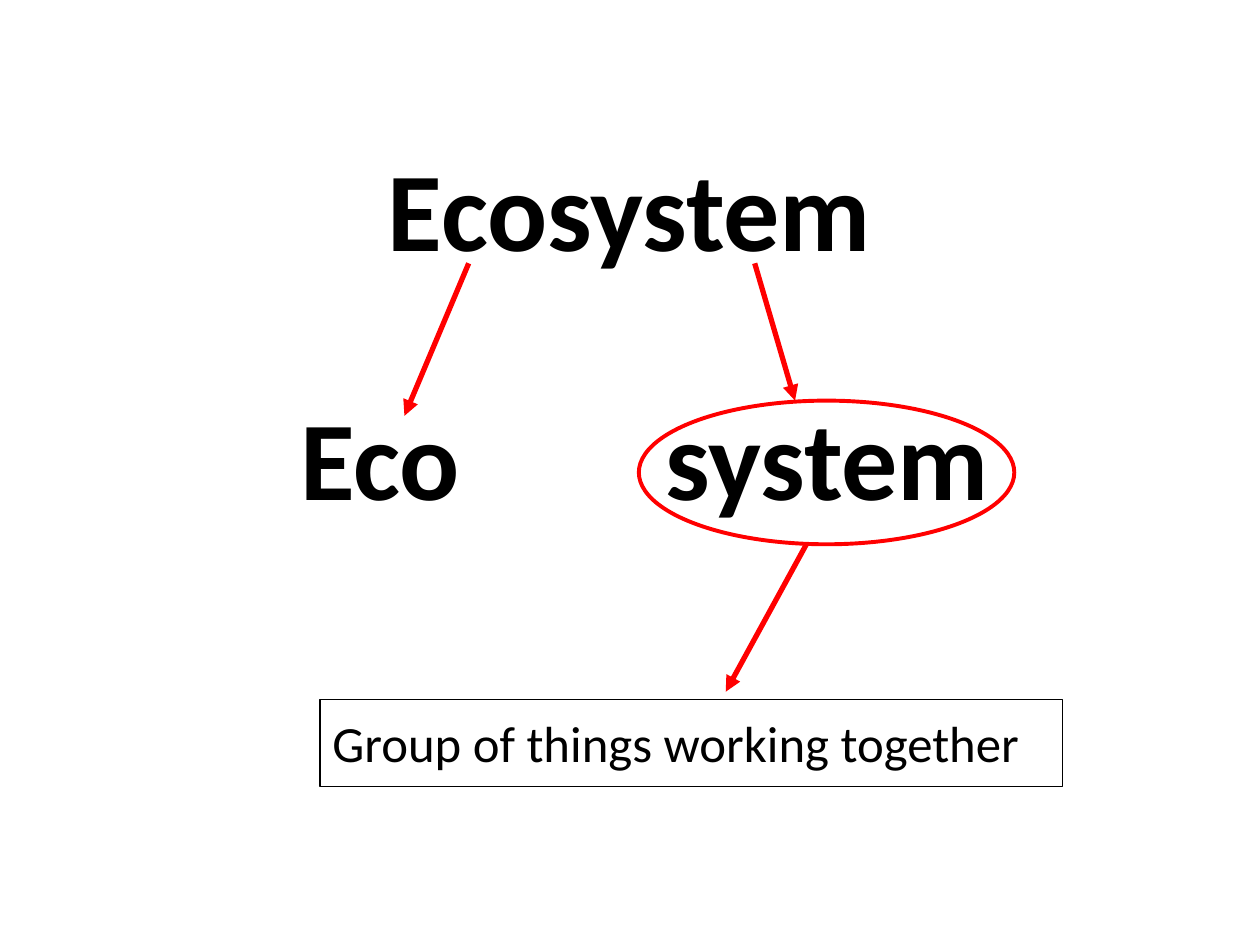
from dataclasses import dataclass

from lxml.etree import SubElement
from pptx import Presentation
from pptx.dml.color import RGBColor
from pptx.enum.shapes import MSO_CONNECTOR, MSO_SHAPE
from pptx.enum.text import MSO_ANCHOR, PP_ALIGN
from pptx.oxml.ns import qn
from pptx.util import Inches, Pt


@dataclass(frozen=True)
class Theme:
    font: str = "Calibri"
    ink: RGBColor = RGBColor(0, 0, 0)
    accent: RGBColor = RGBColor(255, 0, 0)
    word_size: float = 64
    meaning_size: float = 29
    arrow_width: float = 3
    ring_width: float = 2.25
    frame_width: float = 0.75


theme = Theme()

# Grid of 100 columns by 75 rows
lesson = Presentation()
lesson.slide_width, lesson.slide_height = Inches(10), Inches(7.5)
COLUMN = lesson.slide_width / 100
ROW = lesson.slide_height / 75
slide = lesson.slides.add_slide(lesson.slide_layouts[6])


def on_grid(*cells):
    """Turn alternating column and row counts into slide lengths."""
    return [round(n * unit) for n, unit in zip(cells, (COLUMN, ROW) * 2)]


def add_text(text, *, at, size, bold=False, align=PP_ALIGN.LEFT, frame=None):
    box = slide.shapes.add_textbox(*on_grid(*at))
    if frame:
        box.line.color.rgb = theme.ink
        box.line.width = Pt(frame)
    body = box.text_frame
    body.word_wrap = True
    body.vertical_anchor = MSO_ANCHOR.TOP
    body.margin_left = body.margin_right = round(COLUMN)
    body.margin_top = body.margin_bottom = round(ROW)
    line = body.paragraphs[0]
    line.text = text
    line.alignment = align
    line.font.name = theme.font
    line.font.size = Pt(size)
    line.font.bold = bold
    line.font.color.rgb = theme.ink


# The word and its two parts
for word, left, top, width in (
    ("Ecosystem", 20.5, 10.1, 58.9),
    ("Eco", 15.9, 29.8, 28.5),
    ("system", 46.9, 29.8, 37.5),
):
    add_text(word, at=(left, top, width, 12.8), size=theme.word_size,
             bold=True, align=PP_ALIGN.CENTER)

# Ring around "system"
ring = slide.shapes.add_shape(MSO_SHAPE.OVAL, *on_grid(50.7, 31.8, 29.8, 11.4))
ring.shadow.inherit = False
ring.fill.background()
ring.line.color.rgb = theme.accent
ring.line.width = Pt(theme.ring_width)

# Arrows from the word to its parts, and from "system" to its meaning
for start_and_end in (
    (37.2, 20.9, 32.1, 33),
    (59.9, 20.9, 63.1, 31.8),
    (64, 43.2, 57.6, 54.9),
):
    arrow = slide.shapes.add_connector(
        MSO_CONNECTOR.STRAIGHT, *on_grid(*start_and_end))
    arrow.line.color.rgb = theme.accent
    arrow.line.width = Pt(theme.arrow_width)
    SubElement(arrow.line._get_or_add_ln(), qn("a:tailEnd"), type="triangle")
    SubElement(arrow._element.spPr, qn("a:effectLst"))

# Meaning of "system"
add_text("Group of things working together", at=(25.4, 55.5, 58.9, 6.9),
         size=theme.meaning_size, frame=theme.frame_width)

lesson.save("out.pptx")
